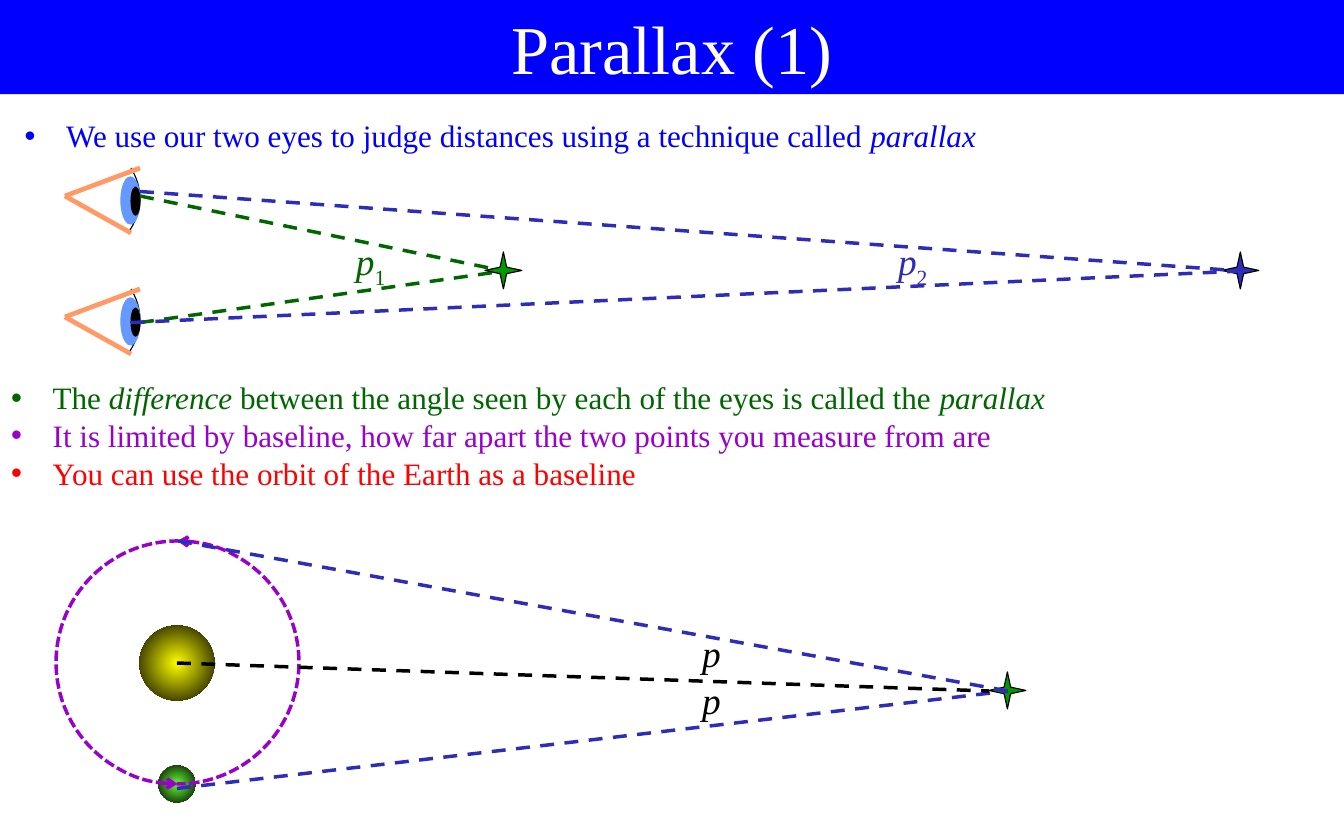
from dataclasses import dataclass

from lxml.etree import SubElement
from pptx import Presentation
from pptx.dml.color import RGBColor
from pptx.enum.dml import MSO_LINE
from pptx.enum.shapes import MSO_CONNECTOR, MSO_SHAPE
from pptx.enum.text import MSO_ANCHOR, MSO_AUTO_SIZE, PP_ALIGN
from pptx.oxml import parse_xml
from pptx.oxml.ns import nsdecls, qn
from pptx.util import Inches, Pt

FONT = "Times New Roman"
COLORS = {
    "white": "FFFFFF", "black": "000000", "blue": "0000FF", "indigo": "2D2DB9",
    "dark green": "006600", "green": "009900", "purple": "9900CC", "red": "FF0000",
    "iris": "6699FF", "eyelid": "FF9966", "earth": "66FF33", "sun": "FFFF00",
}


@dataclass(frozen=True)
class Span:
    text: str
    italic: bool = False
    subscript: bool = False


@dataclass(frozen=True)
class Line:
    spans: tuple[Span, ...]
    color: str


@dataclass(frozen=True)
class Label:
    left: float
    top: float
    line: Line


@dataclass(frozen=True)
class Sight:
    start: tuple[float, float]
    end: tuple[float, float]
    color: str


def rgb(name: str) -> RGBColor:
    return RGBColor.from_string(COLORS[name])


def place(shape, left: float, top: float, width: float, height: float) -> None:
    shape.left, shape.top = Inches(left), Inches(top)
    shape.width, shape.height = Inches(width), Inches(height)


def write_line(paragraph, line: Line, size: float) -> None:
    for span in line.spans:
        run = paragraph.add_run()
        run.text = span.text
        run.font.name, run.font.size = FONT, Pt(size)
        run.font.italic = span.italic
        run.font.color.rgb = rgb(line.color)
        if span.subscript:
            run.font._element.set("baseline", "-25000")


def fill_list(box, lines: list[Line]) -> None:
    frame = box.text_frame
    frame.auto_size = MSO_AUTO_SIZE.NONE
    frame.vertical_anchor = MSO_ANCHOR.TOP
    for index, line in enumerate(lines):
        paragraph = frame.add_paragraph() if index else frame.paragraphs[0]
        paragraph.space_before = Pt(0)
        paragraph.line_spacing = Pt(24.2)
        properties = paragraph._p.get_or_add_pPr()
        properties.set("marL", str(Inches(0.37)))
        properties.set("indent", str(Inches(-0.37)))
        SubElement(properties, qn("a:buChar"), char="•")
        write_line(paragraph, line, 20)


def add_label(page, label: Label) -> None:
    box = page.shapes.add_textbox(
        Inches(label.left), Inches(label.top), Inches(0.75), Inches(0.5))
    box.text_frame.word_wrap = True
    write_line(box.text_frame.paragraphs[0], label.line, 24)


def add_line(page, start, end, color: str, width: float, dashed: bool) -> None:
    line = page.shapes.add_connector(
        MSO_CONNECTOR.STRAIGHT, *(Inches(value) for value in (*start, *end)))
    line.line.color.rgb = rgb(color)
    line.line.width = Pt(width)
    if dashed:
        line.line.dash_style = MSO_LINE.DASH
    SubElement(line._element.spPr, qn("a:effectLst"))


def add_sight(page, sight: Sight) -> None:
    add_line(page, sight.start, sight.end, sight.color, 2.25, True)


def add_filled(page, kind, left, top, width, height, fill: str, outline: str):
    shape = page.shapes.add_shape(
        kind, Inches(left), Inches(top), Inches(width), Inches(height))
    shape.shadow.inherit = False
    shape.fill.solid()
    shape.fill.fore_color.rgb = rgb(fill)
    shape.line.color.rgb = rgb(outline)
    shape.line.width = Pt(0.75)
    return shape


def add_star(page, center_x: float, center_y: float, color: str) -> None:
    add_filled(page, MSO_SHAPE.STAR_4_POINT, center_x - 0.17, center_y - 0.17,
               0.33, 0.33, color, "black")


def add_eye(page, left: float, top: float) -> None:
    heights = [0.56 * step / 12 for step in range(13)]
    cornea = [(left + 0.67 - 0.08 * ((y - 0.27) / 0.27) ** 2, top + y) for y in heights]
    corner = (left, top + 0.27)
    for points, closed in ((cornea + [corner], True), (cornea, False)):
        builder = page.shapes.build_freeform(
            Inches(points[0][0]), Inches(points[0][1]))
        builder.add_line_segments(
            [(Inches(x), Inches(y)) for x, y in points[1:]], close=closed)
        outline = builder.convert_to_shape()
        outline.shadow.inherit = False
        if closed:
            outline.fill.solid()
            outline.fill.fore_color.rgb = rgb("white")
            outline.line.fill.background()
        else:
            outline.fill.background()
            outline.line.color.rgb = rgb("black")
            outline.line.width = Pt(0.75)
    add_filled(page, MSO_SHAPE.OVAL, left + 0.5, top + 0.08, 0.17, 0.42, "iris", "iris")
    add_filled(page, MSO_SHAPE.OVAL, left + 0.59, top + 0.17, 0.08, 0.25, "black", "black")
    for x, y in ((0.67, 0), (0.59, 0.58)):
        add_line(page, (left, top + 0.25), (left + x, top + y), "eyelid", 3, False)


def add_sphere(page, center_x: float, center_y: float, size: float, color: str) -> None:
    sphere = add_filled(page, MSO_SHAPE.OVAL, center_x - size / 2,
                        center_y - size / 2, size, size, color, color)
    sphere.line.fill.background()
    gradient = parse_xml(
        f'<a:gradFill {nsdecls("a")} rotWithShape="1"><a:gsLst>'
        f'<a:gs pos="0"><a:srgbClr val="{COLORS[color]}"/></a:gs>'
        f'<a:gs pos="100000"><a:srgbClr val="{COLORS["black"]}"/></a:gs></a:gsLst>'
        '<a:path path="circle"><a:fillToRect l="50000" t="50000" r="50000" b="50000"/>'
        '</a:path></a:gradFill>')
    properties = sphere._element.spPr
    properties.replace(properties.find(qn("a:solidFill")), gradient)


def add_orbit_half(page, rotation: float) -> None:
    arc = page.shapes.add_shape(
        MSO_SHAPE.ARC, Inches(0.5), Inches(4.83), Inches(2.17), Inches(2.17))
    arc.shadow.inherit = False
    arc.adjustments[0], arc.adjustments[1] = 162, 54.246
    arc.rotation = rotation
    arc.fill.background()
    arc.line.color.rgb = rgb("purple")
    arc.line.width = Pt(2.25)
    arc.line.dash_style = MSO_LINE.SQUARE_DOT
    SubElement(arc.line._get_or_add_ln(), qn("a:headEnd"), type="arrow")


def main() -> None:
    deck = Presentation()
    deck.slide_width, deck.slide_height = Inches(12), Inches(7.5)
    page = deck.slides.add_slide(deck.slide_layouts[3])
    title, intro, findings = page.placeholders

    place(title, 0, 0, 12, 0.84)
    title.fill.solid()
    title.fill.fore_color.rgb = rgb("blue")
    title.text_frame.auto_size = MSO_AUTO_SIZE.NONE
    title.text_frame.vertical_anchor = MSO_ANCHOR.MIDDLE
    heading = title.text_frame.paragraphs[0]
    heading.alignment = PP_ALIGN.CENTER
    write_line(heading, Line((Span("Parallax (1)"),), "white"), 44)

    place(intro, 0.12, 0.99, 11.88, 0.44)
    fill_list(intro, [Line((
        Span("We use our two eyes to judge distances using a technique called "),
        Span("parallax", italic=True)), "blue")])
    place(findings, 0, 3.33, 12, 1.11)
    fill_list(findings, [
        Line((Span("The "), Span("difference", italic=True),
              Span(" between the angle seen by each of the eyes is called the "),
              Span("parallax", italic=True)), "dark green"),
        Line((Span("It is limited by baseline, how far apart the two points "
                   "you measure from are"),), "purple"),
        Line((Span("You can use the orbit of the Earth as a baseline"),), "red"),
    ])

    for top in (1.5, 2.58):
        add_eye(page, 0.58, top)
    near_star, far_star, orbit_star = (4.5, 2.42), (11.08, 2.42), (9, 6.17)
    for start in ((1.25, 2.88), (1.25, 1.75)):
        add_sight(page, Sight(start, near_star, "dark green"))
    add_star(page, *near_star, "green")
    add_star(page, *far_star, "indigo")
    for start in ((1.17, 2.88), (1.25, 1.71)):
        add_sight(page, Sight(start, far_star, "indigo"))

    add_sphere(page, 1.58, 7, 0.33, "earth")
    add_sphere(page, 1.58, 5.92, 0.67, "sun")
    add_star(page, *orbit_star, "green")
    for rotation in (0, 180):
        add_orbit_half(page, rotation)
    for start in ((1.58, 7.04), (1.59, 4.83)):
        add_sight(page, Sight(start, orbit_star, "indigo"))
    add_sight(page, Sight((1.58, 5.92), (8.83, 6.17), "black"))

    angle = Span("p", italic=True)
    for label in (
        Label(3.08, 2.08, Line((angle, Span("1", subscript=True)), "dark green")),
        Label(7.92, 2.08, Line((angle, Span("2", subscript=True)), "indigo")),
        Label(6.17, 5.58, Line((angle,), "black")),
        Label(6.17, 6, Line((angle,), "black")),
    ):
        add_label(page, label)
    deck.save("out.pptx")


if __name__ == "__main__":
    main()
